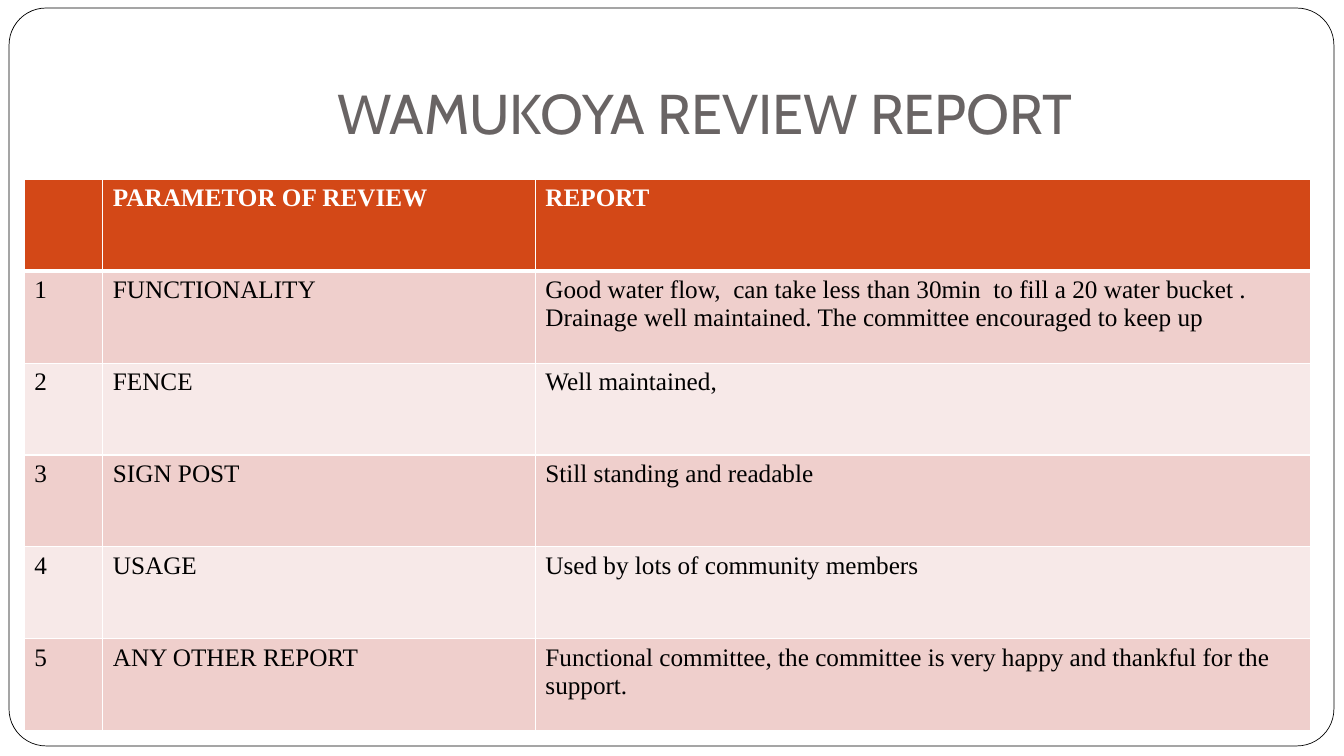
from typing import NamedTuple

from lxml import etree
from pptx import Presentation
from pptx import util as u
from pptx.dml.color import RGBColor
from pptx.enum import shapes, text
from pptx.oxml import ns

WHITE = RGBColor(0xFF, 0xFF, 0xFF)
BLACK = RGBColor(0x00, 0x00, 0x00)
TITLE_GREY = RGBColor(0x69, 0x64, 0x64)
HEADER_ORANGE = RGBColor(0xD3, 0x48, 0x17)
BAND_DARK = RGBColor(0xEF, 0xCF, 0xCC)
BAND_LIGHT = RGBColor(0xF7, 0xE9, 0xE8)

COLUMN_WIDTHS = (0.78, 4.29, 7.69)
TABLE_HEIGHT = 5.47


class ReviewRow(NamedTuple):
    number: str
    parameter: str
    report: str


ROWS = [
    ReviewRow("", "PARAMETOR OF REVIEW", "REPORT"),
    ReviewRow("1", "FUNCTIONALITY",
              "Good water flow,  can take less than 30min  to fill a 20 water bucket . "
              "Drainage well maintained. The committee encouraged to keep up"),
    ReviewRow("2", "FENCE", "Well maintained,"),
    ReviewRow("3", "SIGN POST", "Still standing and readable"),
    ReviewRow("4", "USAGE", "Used by lots of community members"),
    ReviewRow("5", "ANY OTHER REPORT",
              "Functional committee, the committee is very happy and thankful for the support."),
]


def add_run(p, words: str, font: str, size: float, color: RGBColor, bold: bool = False) -> None:
    r = p.add_run()
    r.text = words
    r.font.name = font
    r.font.size = u.Pt(size)
    r.font.bold = bold
    r.font.color.rgb = color


def add_frame(slide) -> None:
    sp = slide.shapes.add_shape(shapes.MSO_SHAPE.ROUNDED_RECTANGLE, u.Inches(0.09),
                                u.Inches(0.08), u.Inches(13.14), u.Inches(7.32))
    sp.adjustments[0] = 0.05
    sp.shadow.inherit = False
    sp.fill.solid()
    sp.fill.fore_color.rgb = WHITE
    sp.line.color.rgb = BLACK
    sp.line.width = u.Pt(0.5)


def add_title(slide) -> None:
    sp = slide.shapes.add_textbox(u.Inches(1.33), u.Inches(0.3), u.Inches(11.33), u.Inches(1.25))
    tf = sp.text_frame
    tf.word_wrap = True
    tf.vertical_anchor = text.MSO_ANCHOR.BOTTOM
    tf.margin_bottom = u.Inches(0.1)
    p = tf.paragraphs[0]
    p.alignment = text.PP_ALIGN.CENTER
    add_run(p, "WAMUKOYA REVIEW REPORT", "Cabin", 40, TITLE_GREY)


def set_border(cell, side: str, points: float) -> None:
    """Draw a white border; sides must be set in the order L, R, T, B, before the fill."""
    tc_pr = cell._tc.get_or_add_tcPr()
    ln = etree.SubElement(tc_pr, ns.qn(f"a:ln{side}"), w=str(u.Pt(points)))
    fill = etree.SubElement(ln, ns.qn("a:solidFill"))
    etree.SubElement(fill, ns.qn("a:srgbClr"), val=str(WHITE))


def add_review_table(slide) -> None:
    frame = slide.shapes.add_table(len(ROWS), len(COLUMN_WIDTHS), u.Inches(0.24), u.Inches(1.78),
                                   u.Inches(sum(COLUMN_WIDTHS)), u.Inches(TABLE_HEIGHT))
    table = frame.table
    for column, width in zip(table.columns, COLUMN_WIDTHS):
        column.width = u.Inches(width)
    for i, row in enumerate(ROWS):
        is_header = i == 0
        band = HEADER_ORANGE if is_header else BAND_DARK if i % 2 else BAND_LIGHT
        for j, words in enumerate(row):
            cell = table.cell(i, j)
            for side in "LRTB":
                under_header = (i, side) in ((0, "B"), (1, "T"))
                set_border(cell, side, 3 if under_header else 1)
            cell.fill.solid()
            cell.fill.fore_color.rgb = band
            if words:
                add_run(cell.text_frame.paragraphs[0], words, "Times New Roman", 18,
                        WHITE if is_header else BLACK, is_header)


def main() -> None:
    prs = Presentation()
    prs.slide_width = u.Inches(13.33)
    prs.slide_height = u.Inches(7.5)
    slide = prs.slides.add_slide(prs.slide_layouts[6])
    add_frame(slide)
    add_title(slide)
    add_review_table(slide)
    prs.save("out.pptx")


if __name__ == "__main__":
    main()
